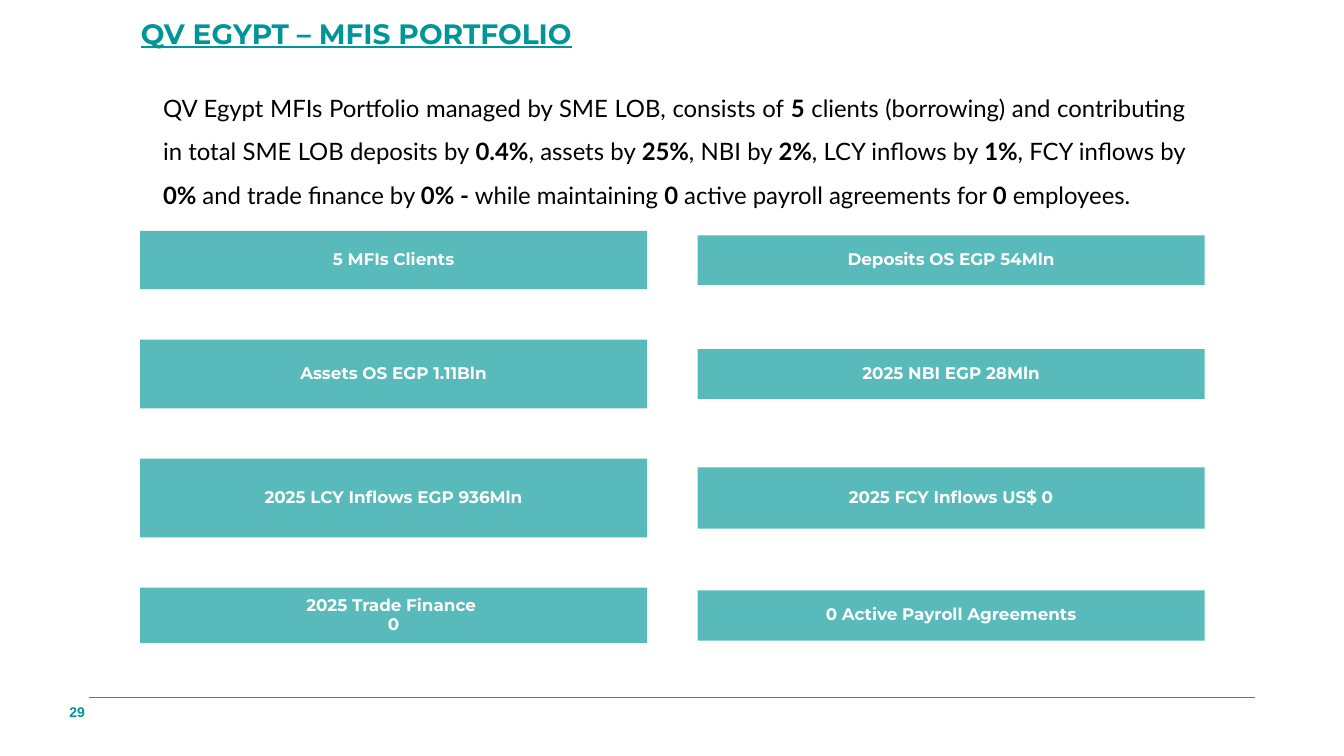
from pptx import Presentation
from pptx.dml.color import RGBColor
from pptx.enum.shapes import MSO_CONNECTOR, MSO_SHAPE
from pptx.enum.text import MSO_ANCHOR, PP_ALIGN
from pptx.oxml.ns import qn
from pptx.util import Cm, Pt
from lxml import etree

RECTANGLE = MSO_SHAPE.RECTANGLE
STRAIGHT = MSO_CONNECTOR.STRAIGHT
TOP, MIDDLE = MSO_ANCHOR.TOP, MSO_ANCHOR.MIDDLE
CENTER, JUSTIFY = PP_ALIGN.CENTER, PP_ALIGN.JUSTIFY

TEAL, LIGHT_TEAL, GREY = "009597", "58BABA", "707173"
BLACK, WHITE = "000000", "FFFFFF"

# Card grid, in centimetres
CARD_LEFT, CARD_TOP, CARD_WIDTH, CARD_GAP = 3.53, 5.82, 12.78, 1.27

# Each row: left text, left height, right text, right height
CARD_ROWS = [
    ("5 MFIs Clients", 1.47, "Deposits OS EGP 54Mln", 1.25),
    ("Assets OS EGP 1.11Bln", 1.73, "2025 NBI EGP 28Mln", 1.25),
    ("2025 LCY Inflows EGP 936Mln", 1.98, "2025 FCY Inflows US$ 0", 1.55),
    ("2025 Trade Finance \n0", 1.4, "0 Active Payroll Agreements", 1.27),
]

# Plain and bold pieces alternate, starting with plain
SUMMARY = [
    "QV Egypt MFIs Portfolio managed by SME LOB, consists of ", "5",
    " clients (borrowing) and contributing in total SME LOB deposits by ", "0.4%",
    ", assets by ", "25%", ", NBI by ", "2%", ", LCY inflows by ", "1%",
    ", FCY inflows by ", "0%", " and trade finance by ", "0% - ",
    "while maintaining ", "0", " active payroll agreements for ", "0",
    " employees.",
]


def color(value):
    return RGBColor.from_string(value)


def style(paragraph, name, size, font_color, bold=None):
    font = paragraph.font
    font.name, font.size, font.bold = name, Pt(size), bold
    font.color.rgb = color(font_color)


def add_text(slide, left, top, width, height, anchor=TOP):
    box = slide.shapes.add_textbox(Cm(left), Cm(top), Cm(width), Cm(height))
    box.text_frame.word_wrap = True
    box.text_frame.vertical_anchor = anchor
    return box.text_frame.paragraphs[0]


def add_card(slide, text, left, middle, height):
    shape = slide.shapes.add_shape(
        RECTANGLE, Cm(left), Cm(middle - height / 2), Cm(CARD_WIDTH), Cm(height))
    shape.shadow.inherit = False
    shape.fill.solid()
    shape.fill.fore_color.rgb = color(LIGHT_TEAL)
    shape.line.fill.background()
    frame = shape.text_frame
    frame.word_wrap = True
    frame.vertical_anchor = MIDDLE
    frame.margin_left = frame.margin_right = Cm(0.13)
    frame.margin_top = frame.margin_bottom = Cm(0.13)
    paragraph = frame.paragraphs[0]
    paragraph.text = text
    paragraph.alignment = CENTER
    paragraph.line_spacing = 0.9
    style(paragraph, "Montserrat", 12, WHITE, True)


def add_cards(slide):
    top = CARD_TOP
    for left_text, left_height, right_text, right_height in CARD_ROWS:
        middle = top + left_height / 2
        add_card(slide, left_text, CARD_LEFT, middle, left_height)
        add_card(slide, right_text, CARD_LEFT + CARD_WIDTH + CARD_GAP,
                 middle, right_height)
        top += left_height + CARD_GAP


def add_summary(slide):
    paragraph = add_text(slide, 3.3, 1.88, 26.82, 3.43)
    paragraph.alignment = JUSTIFY
    paragraph.line_spacing = 1.5
    properties = paragraph._p.get_or_add_pPr()
    properties.set("marL", str(Cm(0.56)))
    properties.set("indent", "0")
    style(paragraph, "Lato", 17.1, BLACK)
    for index, text in enumerate(SUMMARY):
        run = paragraph.add_run()
        run.text = text
        run.font.bold = index % 2 == 1


def add_title(slide, text):
    paragraph = add_text(slide, 3.3, 0.41, 22.35, 1.04)
    paragraph.text = text
    paragraph.line_spacing = 0.85
    style(paragraph, "Montserrat", 20, TEAL, True)
    paragraph.font.underline = True


def add_footer(slide, number):
    line = slide.shapes.add_connector(
        STRAIGHT, Cm(2.24), Cm(17.58), Cm(31.62), Cm(17.58))
    line.line.color.rgb = color(GREY)
    line.line.width = Pt(0.5)
    etree.SubElement(line._element.spPr, qn("a:effectLst"))
    paragraph = add_text(slide, 1.5, 17.58, 1.5, 0.71, MIDDLE)
    paragraph.text = number
    style(paragraph, "Arial", 10, TEAL, True)


def main():
    presentation = Presentation()
    presentation.slide_width, presentation.slide_height = Cm(33.87), Cm(19.05)
    slide = presentation.slides.add_slide(presentation.slide_layouts[6])
    add_title(slide, "QV EGYPT – MFIS PORTFOLIO")
    add_summary(slide)
    add_cards(slide)
    add_footer(slide, "29")
    presentation.save("out.pptx")


if __name__ == "__main__":
    main()
